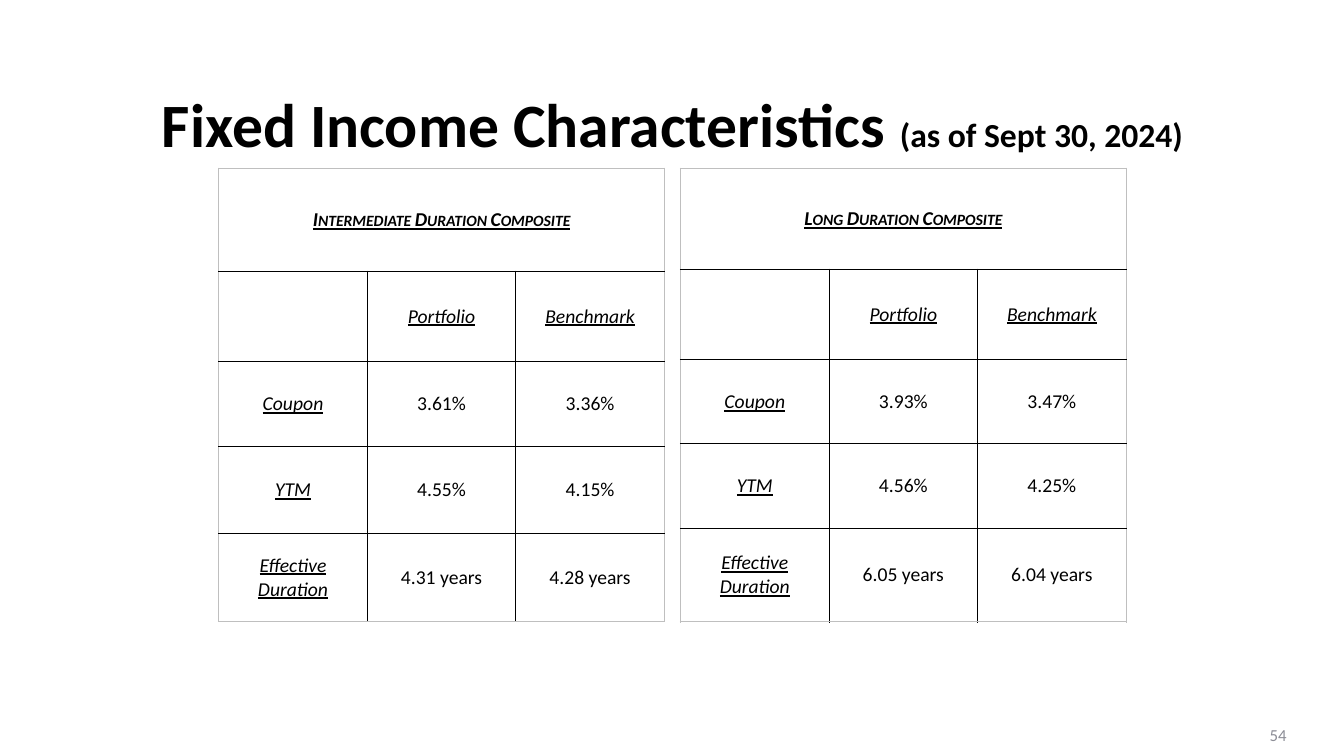
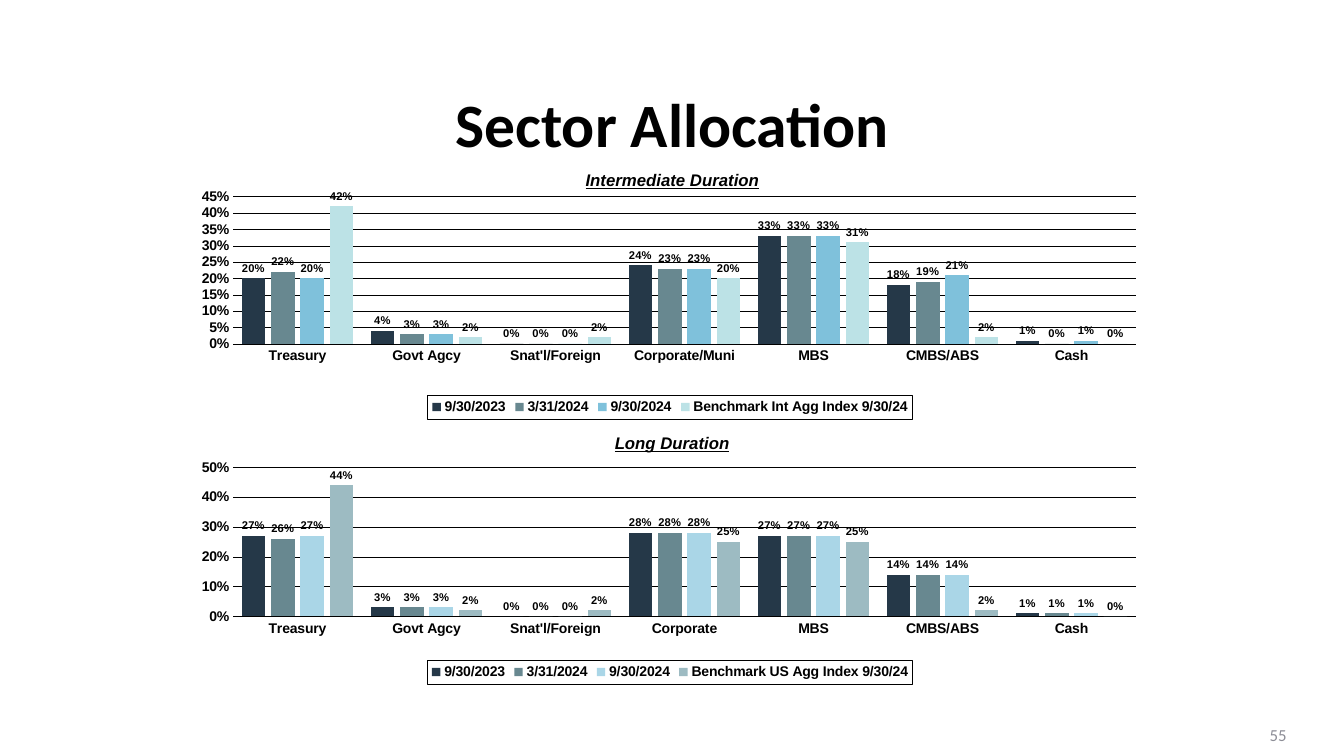
"""Build two fixed income slides: portfolio characteristics and sector allocation."""
from lxml import etree
from pptx import Presentation
from pptx import util as u
from pptx.chart.data import CategoryChartData
from pptx.dml.color import RGBColor
from pptx.enum import chart as charts, text
from pptx.oxml import ns

BLACK = RGBColor(0x00, 0x00, 0x00)
EDGE_GRAY = RGBColor(0xBF, 0xBF, 0xBF)
NUMBER_GRAY = RGBColor(0x8C, 0x8D, 0x96)
NAVY = RGBColor(0x25, 0x38, 0x48)
SLATE = RGBColor(0x68, 0x88, 0x90)
SKY = RGBColor(0x7F, 0xC1, 0xDB)
MINT = RGBColor(0xBC, 0xE2, 0xE6)
PALE_BLUE = RGBColor(0xAA, 0xD6, 0xE7)
STEEL = RGBColor(0x9D, 0xBB, 0xC2)

TEXT_FONT = "Calibri"
CHART_FONT = "Arial"
ROW_LABELS = ["Coupon", "YTM", "Effective Duration"]
DATES = ["9/30/2023", "3/31/2024", "9/30/2024"]


def style_font(font, name, size, color=BLACK, bold=False, slanted=False):
    """Format a font; slanted means italic and underlined."""
    font.name, font.size, font.bold = name, u.Pt(size), bold
    font.italic = font.underline = slanted
    font.color.rgb = color


def add_span(para, words, size, **style):
    """Add one formatted run in the text font."""
    span = para.add_run()
    span.text = words
    style_font(span.font, TEXT_FONT, size, **style)
    return span


def add_page(deck, number, title, note=""):
    """Add a slide with its title and page number."""
    page = deck.slides.add_slide(deck.slide_layouts[5])
    heading = page.shapes.title
    heading.left, heading.top = u.Inches(0.92), u.Inches(0.75)
    heading.width, heading.height = u.Inches(11.5), u.Inches(1.03)
    frame = heading.text_frame
    frame.auto_size = text.MSO_AUTO_SIZE.NONE
    frame.vertical_anchor = text.MSO_ANCHOR.MIDDLE
    para = frame.paragraphs[0]
    para.alignment, para.line_spacing = text.PP_ALIGN.CENTER, 0.9
    add_span(para, title, 44, bold=True)
    if note:
        add_span(para, note, 24, bold=True)

    box = page.shapes.add_textbox(u.Inches(9.86), u.Inches(7.09), u.Inches(3), u.Inches(0.4))
    box.text_frame.word_wrap = True
    box.text_frame.vertical_anchor = text.MSO_ANCHOR.MIDDLE
    para = box.text_frame.paragraphs[0]
    para.alignment = text.PP_ALIGN.RIGHT
    add_span(para, str(number), 12, color=NUMBER_GRAY)
    return page


def draw_borders(cell, outer):
    """Draw four cell borders, gray on the sides named in outer."""
    properties = cell._tc.get_or_add_tcPr()
    for side in "LRTB":
        line = etree.SubElement(properties, ns.qn(f"a:ln{side}"), w=str(u.Pt(1)))
        fill = etree.SubElement(line, ns.qn("a:solidFill"))
        color = EDGE_GRAY if side in outer else BLACK
        etree.SubElement(fill, ns.qn("a:srgbClr"), val=str(color))
    cell.fill.background()


def add_composite_table(page, left, heading, values, heights):
    """Add a table of portfolio and benchmark values."""
    rows = [[heading, "", ""], ["", "Portfolio", "Benchmark"]]
    rows += [[label, *pair] for label, pair in zip(ROW_LABELS, values)]
    table = page.shapes.add_table(
        len(rows), 3, u.Inches(left), u.Inches(1.67), u.Inches(4.42), u.Inches(4.5)).table
    table.first_row = table.horz_banding = False
    for column in table.columns:
        column.width = u.Inches(4.42 / 3)
    for row, height in zip(table.rows, heights):
        row.height = u.Inches(height)
    table.cell(0, 0).merge(table.cell(0, 2))
    for r, row in enumerate(rows):
        for c, words in enumerate(row):
            cell = table.cell(r, c)
            edges = {"L": c == 0, "R": c == 2 or r == 0, "T": r == 0, "B": r == len(rows) - 1}
            draw_borders(cell, [side for side, is_outer in edges.items() if is_outer])
            cell.vertical_anchor = text.MSO_ANCHOR.MIDDLE
            if words:
                para = cell.text_frame.paragraphs[0]
                para.alignment = text.PP_ALIGN.CENTER
                span = add_span(para, words, 14, bold=r == 0, slanted=r < 2 or c == 0)
                if r == 0:
                    span.font._element.set("cap", "small")


def place_part(part, index, **bounds):
    """Give a chart part a manual layout as fractions of the chart."""
    for old in part.findall(ns.qn("c:layout")):
        part.remove(old)
    layout = etree.Element(ns.qn("c:layout"))
    manual = etree.SubElement(layout, ns.qn("c:manualLayout"))
    if index == 0:
        etree.SubElement(manual, ns.qn("c:layoutTarget"), val="inner")
    for key in ("x", "y"):
        etree.SubElement(manual, ns.qn(f"c:{key}Mode"), val="edge")
    for key, value in bounds.items():
        etree.SubElement(manual, ns.qn(f"c:{key}"), val=str(value))
    part.insert(index, layout)


def add_legend(chart):
    """Add a framed legend at the bottom of the chart."""
    chart.has_legend = True
    legend = chart.legend
    legend.position = charts.XL_LEGEND_POSITION.BOTTOM
    legend.include_in_layout = False
    style_font(legend.font, CHART_FONT, 10, bold=True)
    place_part(legend._element, 1, x=0.25, y=0.91, w=0.5, h=0.09)
    frame = etree.Element(ns.qn("c:spPr"))
    line = etree.SubElement(frame, ns.qn("a:ln"), w=str(u.Pt(0.25)))
    fill = etree.SubElement(line, ns.qn("a:solidFill"))
    etree.SubElement(fill, ns.qn("a:srgbClr"), val=str(BLACK))
    legend._element.find(ns.qn("c:txPr")).addprevious(frame)


def style_axes(chart, top, step):
    """Format both axes and the gridlines."""
    axis = chart.value_axis
    axis.minimum_scale, axis.maximum_scale, axis.major_unit = 0, top, step
    axis.tick_labels.number_format = "0%"
    axis.tick_labels.number_format_is_linked = False
    axis.format.line.fill.background()
    for line in (axis.major_gridlines.format.line, chart.category_axis.format.line):
        line.color.rgb, line.width = BLACK, u.Pt(0.25)
    for each in (axis, chart.category_axis):
        each.major_tick_mark = each.minor_tick_mark = charts.XL_TICK_MARK.NONE
        style_font(each.tick_labels.font, CHART_FONT, 10, bold=True)


def add_sector_chart(page, top, height, title, title_left, plot_top, scale, credit, index, values, colors):
    """Add a clustered column chart of sector weights in percent."""
    data = CategoryChartData(number_format="0%")
    data.categories = ["Treasury", "Govt Agcy", "Snat'l/Foreign", credit, "MBS", "CMBS/ABS", "Cash"]
    for name, weights in zip([*DATES, index], values):
        data.add_series(name, [weight / 100 for weight in weights])
    chart = page.shapes.add_chart(
        charts.XL_CHART_TYPE.COLUMN_CLUSTERED, u.Inches(1.83), u.Inches(top),
        u.Inches(9.63), u.Inches(height), data).chart
    style_font(chart.font, CHART_FONT, 18, bold=True)

    chart.has_title = True
    span = chart.chart_title.text_frame.paragraphs[0].add_run()
    span.text = title
    style_font(span.font, CHART_FONT, 12, bold=True, slanted=True)
    place_part(chart.chart_title._element, 1, x=title_left, y=0.06)
    place_part(chart._chartSpace.chart.plotArea, 0, x=0.05, y=plot_top, w=0.93, h=0.55)
    add_legend(chart)
    style_axes(chart, *scale)

    plot = chart.plots[0]
    plot.gap_width, plot.overlap, plot.vary_by_categories = 75, -25, False
    for series, color in zip(plot.series, colors):
        series.format.fill.solid()
        series.format.fill.fore_color.rgb = color
        labels = series.data_labels
        labels.show_value = True
        labels.position = charts.XL_LABEL_POSITION.OUTSIDE_END
        labels.number_format, labels.number_format_is_linked = "0%", False
        style_font(labels.font, CHART_FONT, 8, bold=True)


def main():
    """Build and save the deck."""
    deck = Presentation()
    deck.slide_width, deck.slide_height = u.Inches(13.33), u.Inches(7.5)

    page = add_page(deck, 54, "Fixed Income Characteristics ", "(as of Sept 30, 2024)")
    add_composite_table(
        page, 2.17, "Intermediate Duration Composite",
        [("3.61%", "3.36%"), ("4.55%", "4.15%"), ("4.31 years", "4.28 years")],
        [1.02, 0.9, 0.84, 0.86, 0.88])
    add_composite_table(
        page, 6.75, "Long Duration Composite",
        [("3.93%", "3.47%"), ("4.56%", "4.25%"), ("6.05 years", "6.04 years")],
        [1, 0.9, 0.83, 0.84, 0.93])

    page = add_page(deck, 55, "Sector Allocation")
    add_sector_chart(
        page, 1.5, 2.66, "Intermediate Duration", 0.41, 0.17, (0.45, 0.05),
        "Corporate/Muni", "Benchmark Int Agg Index 9/30/24",
        [[20, 4, 0, 24, 33, 18, 1], [22, 3, 0, 23, 33, 19, 0],
         [20, 3, 0, 23, 33, 21, 1], [42, 2, 2, 20, 31, 2, 0]],
        [NAVY, SLATE, SKY, MINT])
    add_sector_chart(
        page, 4.1, 2.69, "Long Duration", 0.44, 0.2, (0.5, 0.1),
        "Corporate", "Benchmark US Agg Index 9/30/24",
        [[27, 3, 0, 28, 27, 14, 1], [26, 3, 0, 28, 27, 14, 1],
         [27, 3, 0, 28, 27, 14, 1], [44, 2, 2, 25, 25, 2, 0]],
        [NAVY, SLATE, PALE_BLUE, STEEL])
    deck.save("out.pptx")


if __name__ == "__main__":
    main()
